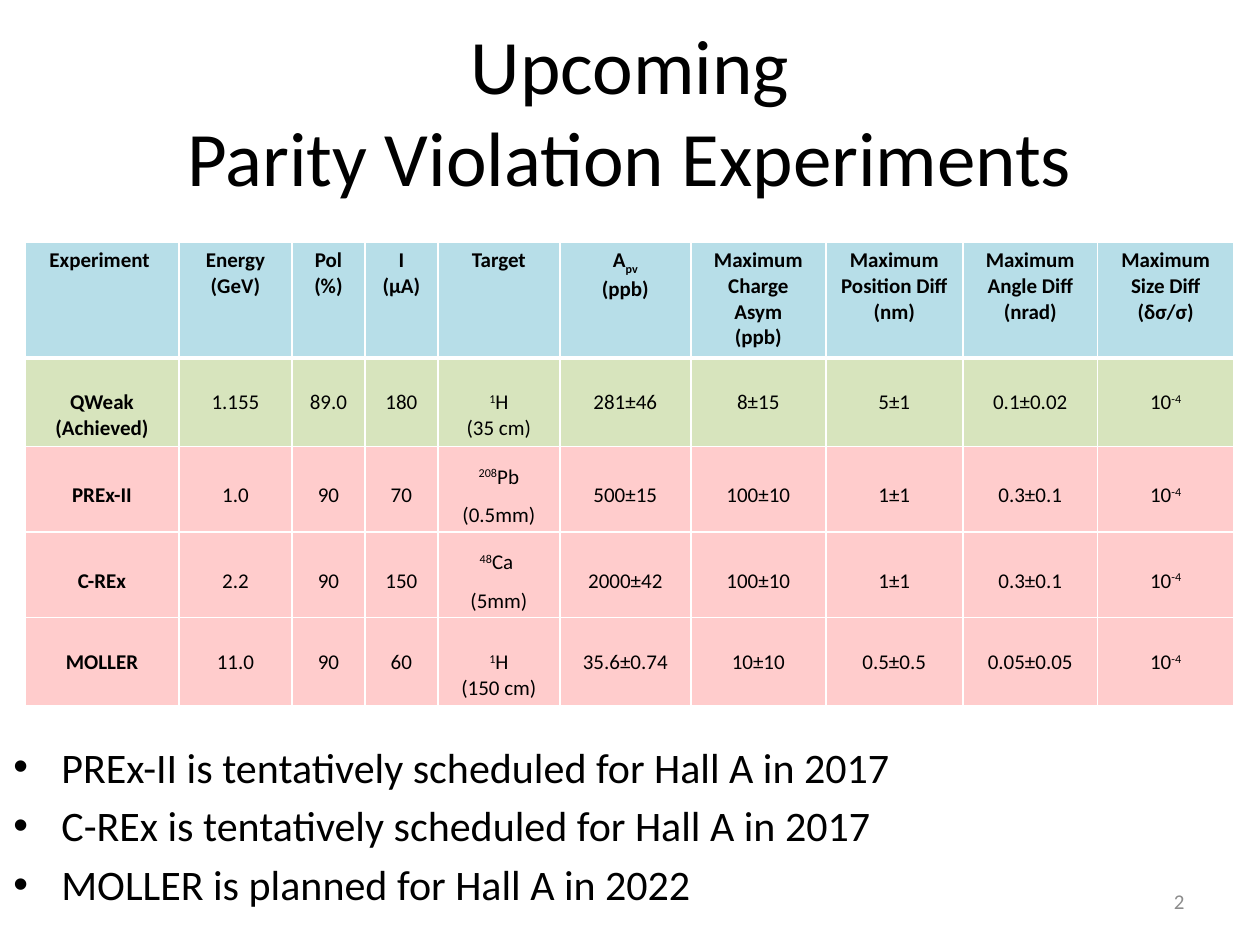
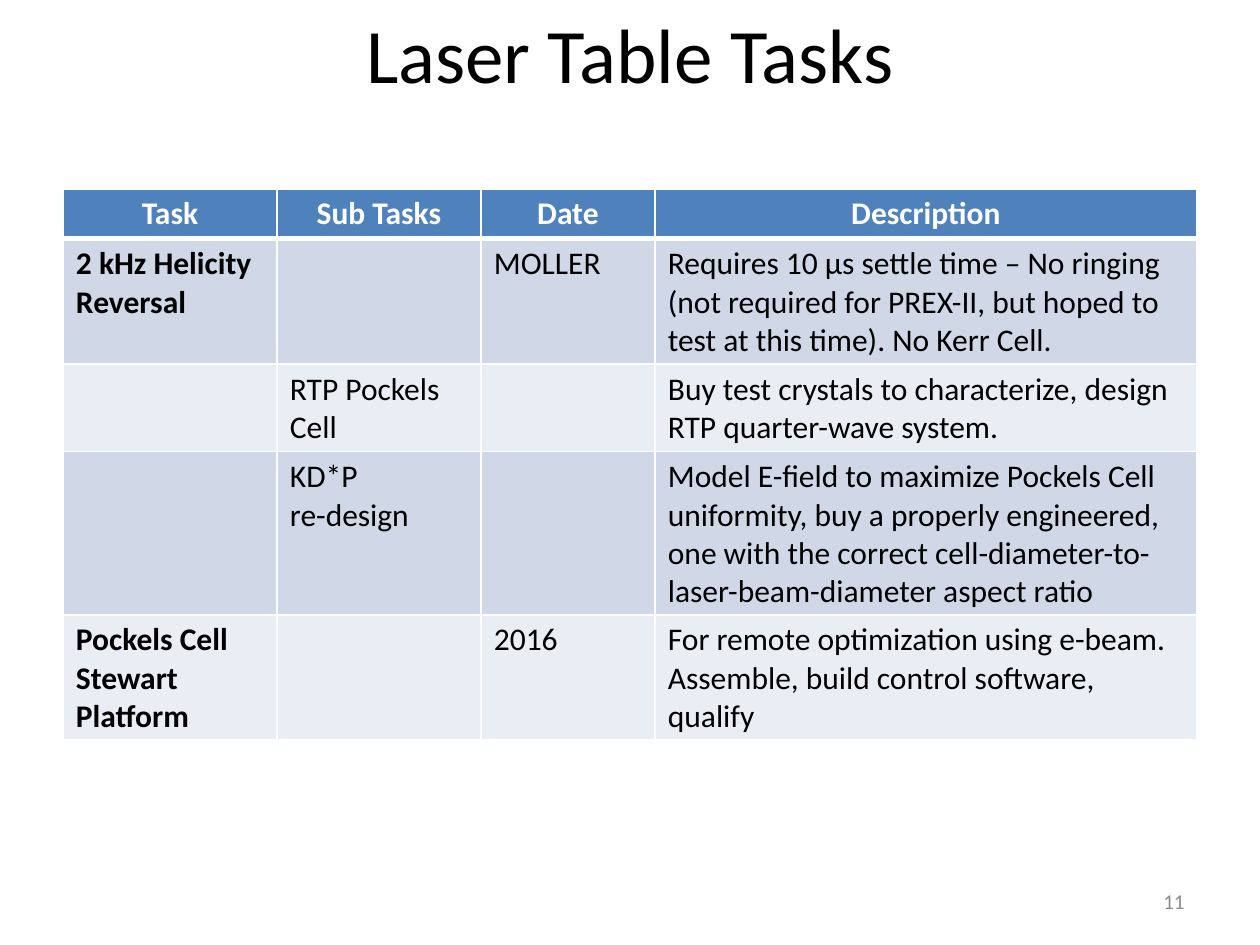
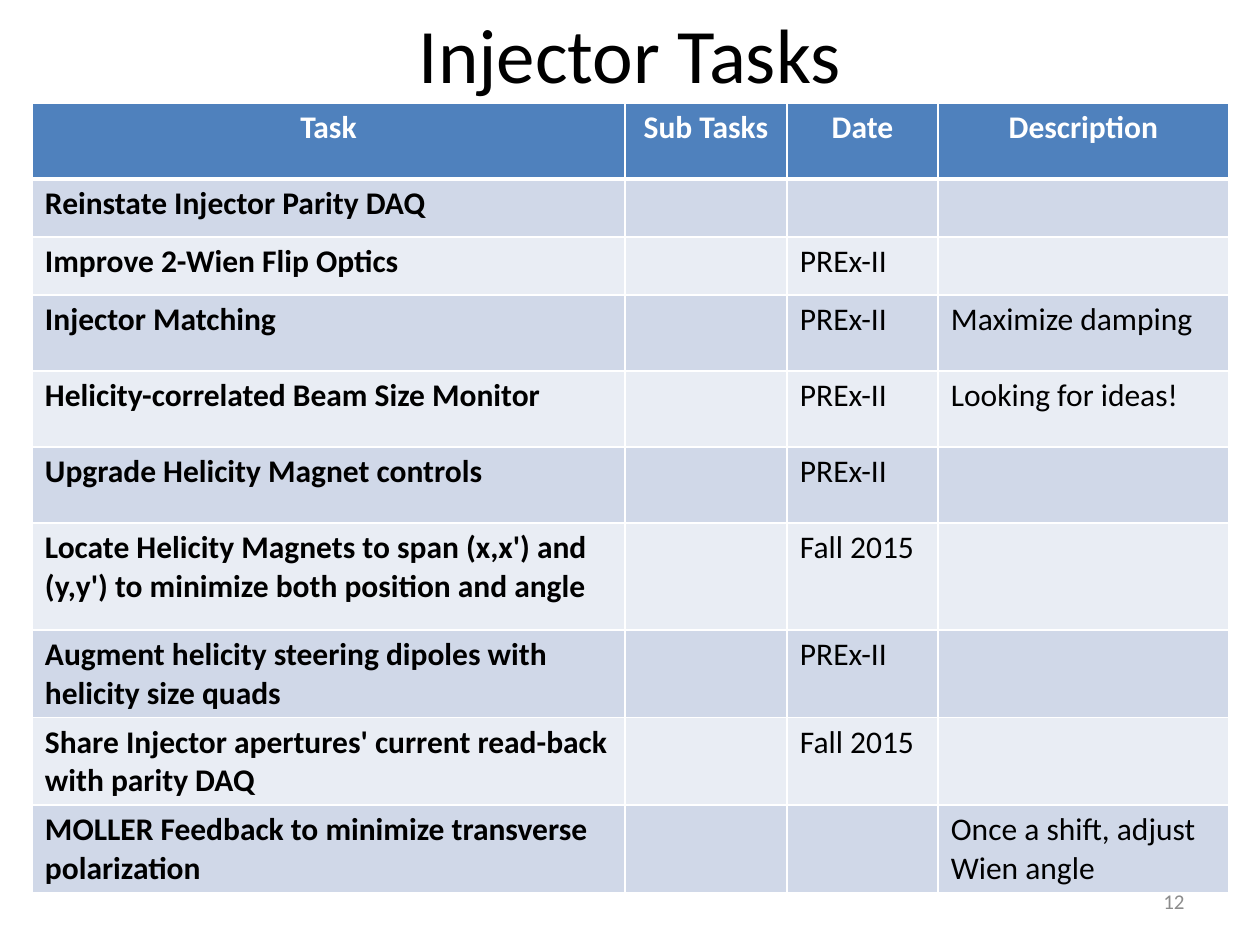
from dataclasses import dataclass

from lxml import etree
from pptx import Presentation
from pptx import util as u
from pptx.dml.color import RGBColor
from pptx.enum import text
from pptx.oxml.ns import qn


@dataclass(frozen=True)
class Theme:
    font: str = "Calibri"
    ink: str = "000000"
    white: str = "FFFFFF"
    muted: str = "8C8C8C"
    sky: str = "B7DEE8"
    green: str = "D7E4BD"
    pink: str = "FFCCCC"
    blue: str = "4F81BD"
    bands: tuple = ("D0D8E8", "E9EDF4")
    title: int = 44
    bullet: int = 24
    task: int = 18
    small: int = 12


@dataclass(frozen=True)
class Look:
    fill: str
    size: int
    color: str = Theme.ink
    bold: bool = False
    bold_first: bool = True
    align: text.PP_ALIGN = text.PP_ALIGN.CENTER
    anchor: text.MSO_ANCHOR = text.MSO_ANCHOR.TOP
    spacing: float = 1.0
    margins: tuple = (13, 6, 13, 6)


T = Theme()
LEFT, RIGHT, CENTER = text.PP_ALIGN.LEFT, text.PP_ALIGN.RIGHT, text.PP_ALIGN.CENTER
MIDDLE = text.MSO_ANCHOR.MIDDLE
SCRIPT_SHIFT = {"^": "30000", "_": "-25000"}

EXPERIMENTS = [
    ["Experiment ", "Energy\n(GeV)", "Pol\n(%)", "I\n(µA)", "Target", "A|_pv\n(ppb)",
     "Maximum Charge Asym\n(ppb)", "Maximum\nPosition Diff\n(nm)",
     "Maximum\nAngle Diff\n(nrad)", "Maximum\nSize Diff\n(δσ/σ)"],
    ["QWeak\n(Achieved)", "1.155", "89.0", "180", "^1|H\n(35 cm)", "281±46",
     "8±15", "5±1", "0.1±0.02", "10|^-4"],
    ["PREx-II", "1.0", "90", "70", "^208|Pb (0.5mm)", "500±15",
     "100±10", "1±1", "0.3±0.1", "10|^-4"],
    ["C-REx", "2.2", "90", "150", "^48|Ca \n(5mm)", "2000±42",
     "100±10", "1±1", "0.3±0.1", "10|^-4"],
    ["MOLLER", "11.0", "90", "60", "^1|H\n(150 cm)", "35.6±0.74",
     "10±10", "0.5±0.5", "0.05±0.05", "10|^-4"],
]
SCHEDULE = [
    "PREx-II is tentatively scheduled for Hall A in 2017",
    "C-REx is tentatively scheduled for Hall A in 2017",
    "MOLLER is planned for Hall A in 2022",
]
TASK_HEADER = ["Task", "Sub Tasks", "Date", "Description"]
LASER_TASKS = [
    TASK_HEADER,
    ["2 kHz Helicity Reversal", "", "MOLLER",
     "Requires 10 µs settle time – No ringing\n"
     "(not required for PREX-II, but hoped to test at this time). No Kerr Cell."],
    ["", "RTP Pockels Cell", "",
     "Buy test crystals to characterize, design RTP quarter-wave system."],
    ["", "KD*P\nre-design", "",
     "Model E-field to maximize Pockels Cell uniformity, buy a properly engineered, "
     "one with the correct cell-diameter-to-laser-beam-diameter aspect ratio"],
    ["Pockels Cell Stewart Platform", "", "2016",
     "For remote optimization using e-beam.\n"
     "Assemble, build control software, qualify"],
]
INJECTOR_TASKS = [
    TASK_HEADER,
    ["Reinstate Injector Parity DAQ", "", "", ""],
    ["Improve 2-Wien Flip Optics", "", "PREx-II", ""],
    ["Injector Matching", "", "PREx-II", "Maximize damping"],
    ["Helicity-correlated Beam Size Monitor", "", "PREx-II", "Looking for ideas!"],
    ["Upgrade Helicity Magnet controls", "", "PREx-II", ""],
    ["Locate Helicity Magnets to span (x,x') and (y,y') to minimize both position and angle",
     "", "Fall 2015", ""],
    ["Augment helicity steering dipoles with helicity size quads", "", "PREx-II", ""],
    ["Share Injector apertures' current read-back with parity DAQ", "", "Fall 2015", ""],
    ["MOLLER Feedback to minimize transverse polarization", "", "",
     "Once a shift, adjust Wien angle"],
]


def px(n):
    return u.Emu(round(n * 914400 / 126))


def format_runs(p, size, color, bold=False):
    for r in p.runs:
        r.font.name = T.font
        r.font.size = u.Pt(size)
        r.font.bold = bold
        r.font.color.rgb = RGBColor.from_string(color)


def add_title_slide(prs, title, height, number):
    s = prs.slides.add_slide(prs.slide_layouts[5])
    sp = s.shapes.title
    sp.left, sp.top, sp.width, sp.height = map(px, (63, 0, 1134, height))
    tf = sp.text_frame
    tf.text = title
    tf.auto_size = text.MSO_AUTO_SIZE.NONE
    tf.vertical_anchor = MIDDLE
    p = tf.paragraphs[0]
    p.alignment = CENTER
    format_runs(p, T.title, T.ink)
    tf = add_text(s, (903, 876, 294, 50), [str(number)], T.small, T.muted)
    tf.vertical_anchor = MIDDLE
    tf.paragraphs[0].alignment = RIGHT
    return s


def add_text(s, box, lines, size, color):
    tf = s.shapes.add_textbox(*map(px, box)).text_frame
    tf.word_wrap = True
    tf.text = "\n".join(lines)
    for p in tf.paragraphs:
        format_runs(p, size, color)
    return tf


def add_bullets(s, box, lines):
    tf = add_text(s, box, lines, T.bullet, T.ink)
    for p in tf.paragraphs:
        pPr = p._p.get_or_add_pPr()
        pPr.set("marL", str(px(48)))
        pPr.set("indent", str(-px(48)))
        before = etree.SubElement(pPr, qn("a:spcBef"))
        etree.SubElement(before, qn("a:spcPct"), val="20000")
        etree.SubElement(pPr, qn("a:buFont"), typeface="Arial")
        etree.SubElement(pPr, qn("a:buChar"), char="•")


def set_borders(cell, top, bottom):
    tcPr = cell._tc.get_or_add_tcPr()
    for side, width in (("L", 1), ("R", 1), ("T", top), ("B", bottom)):
        ln = etree.SubElement(tcPr, qn(f"a:ln{side}"), w=str(u.Pt(width)))
        fill = etree.SubElement(ln, qn("a:solidFill"))
        etree.SubElement(fill, qn("a:srgbClr"), val=T.white)


def fill_cell(cell, value, look, bold):
    cell.fill.solid()
    cell.fill.fore_color.rgb = RGBColor.from_string(look.fill)
    cell.vertical_anchor = look.anchor
    (cell.margin_left, cell.margin_top,
     cell.margin_right, cell.margin_bottom) = map(px, look.margins)
    tf = cell.text_frame
    for i, line in enumerate(value.split("\n")):
        p = tf.add_paragraph() if i else tf.paragraphs[0]
        p.alignment = look.align
        p.line_spacing = look.spacing
        for part in filter(None, line.split("|")):
            shift = SCRIPT_SHIFT.get(part[0])
            r = p.add_run()
            r.text = part[1:] if shift else part
            if shift:
                r.font._element.set("baseline", shift)
        format_runs(p, look.size, look.color, bold)


def add_grid(s, box, widths, heights, rows, looks):
    gf = s.shapes.add_table(len(rows), len(widths), *map(px, box))
    tbl = gf.table
    for col, width in zip(tbl.columns, widths):
        col.width = px(width)
    for row, height in zip(tbl.rows, heights):
        row.height = px(height)
    gf.height = px(box[3])
    for i, (values, look) in enumerate(zip(rows, looks)):
        for j, value in enumerate(values):
            cell = tbl.cell(i, j)
            set_borders(cell, 3 if i == 1 else 1, 3 if i == 0 else 1)
            fill_cell(cell, value, look, look.bold or (look.bold_first and j == 0))


def add_task_table(s, box, widths, heights, rows):
    header = Look(T.blue, T.task, T.white, bold=True)
    bands = [Look(fill, T.task, align=LEFT) for fill in T.bands]
    looks = [header] + [bands[i % 2] for i in range(len(rows) - 1)]
    add_grid(s, box, widths, heights, rows, looks)


def add_experiment_table(s):
    lowered = (13, 32, 13, 6)
    spaced = Look(T.pink, T.small, anchor=MIDDLE, spacing=1.5, margins=(10, 5, 10, 5))
    looks = [
        Look(T.sky, T.small, bold=True),
        Look(T.green, T.small, margins=lowered),
        spaced,
        spaced,
        Look(T.pink, T.small, margins=lowered),
    ]
    add_grid(s, (25, 242, 1210, 465),
             [154, 113, 73, 73, 122, 131, 135, 137, 135, 136],
             [116, 73, 73, 73, 78], EXPERIMENTS, looks)


def main():
    prs = Presentation()
    prs.slide_width, prs.slide_height = px(1260), px(945)

    s = add_title_slide(prs, "Upcoming\vParity Violation Experiments", 220, 2)
    add_experiment_table(s)
    add_bullets(s, (1, 735, 1260, 212), SCHEDULE)

    s = add_title_slide(prs, "Laser Table Tasks", 105, 11)
    add_task_table(s, (63, 189, 1134, 554), [214, 204, 174, 542],
                   [49, 105, 64, 161, 92], LASER_TASKS)

    s = add_title_slide(prs, "Injector Tasks", 105, 12)
    add_task_table(s, (32, 103, 1197, 789), [593, 162, 151, 291],
                   [76, 58, 58, 76, 76, 76, 107, 76, 76, 76], INJECTOR_TASKS)

    prs.save("out.pptx")


if __name__ == "__main__":
    main()
